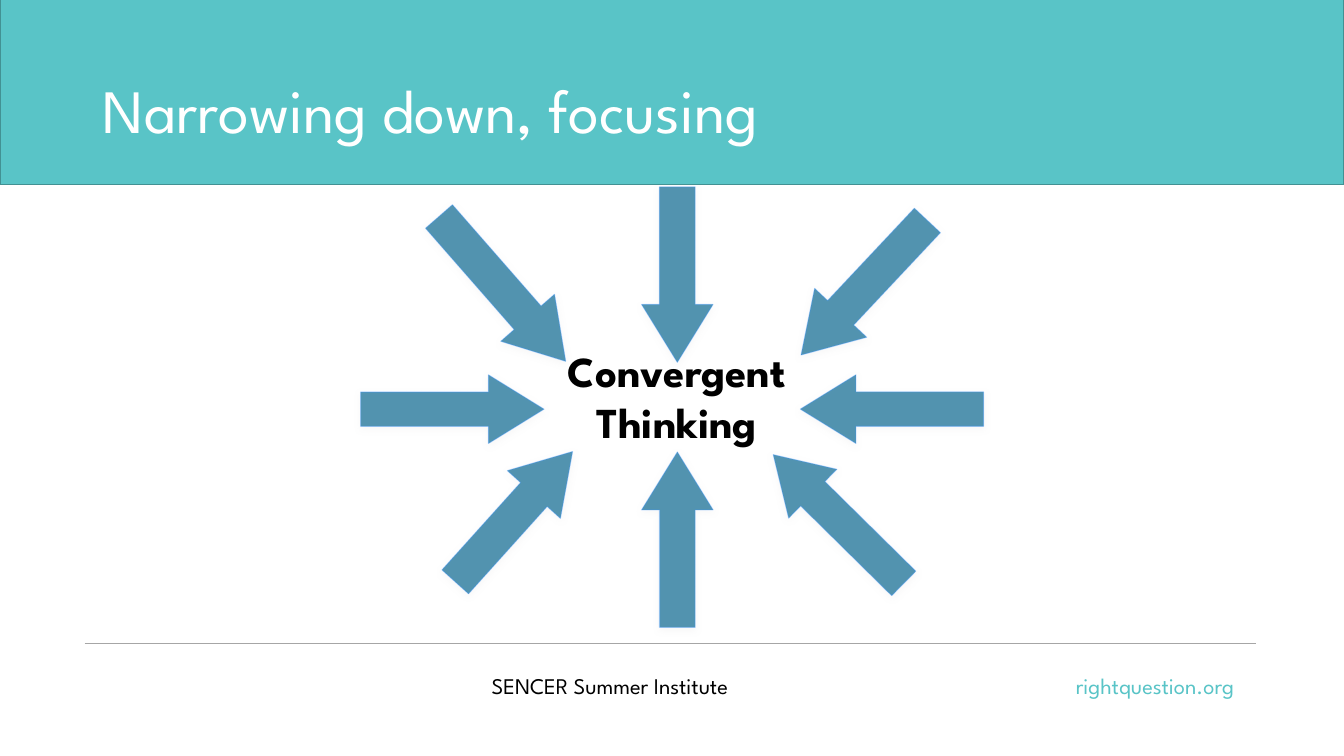
import pptx
import pptx.util
import pptx.dml.color
import pptx.enum.shapes
import pptx.enum.text
import pptx.oxml
import pptx.oxml.ns
from pptx.util import Cm

MSO_SHAPE = pptx.enum.shapes.MSO_SHAPE
ANCHOR = pptx.enum.text.MSO_ANCHOR
ALIGN = pptx.enum.text.PP_ALIGN


def paint(color_format, color, alpha=None):
    """Set a hex colour, with an optional opacity in percent."""
    color_format.rgb = pptx.dml.color.RGBColor.from_string(color)
    if alpha is not None:
        fill = color_format._xFill
        opacity = fill[0].makeelement(pptx.oxml.ns.qn("a:alpha"), {"val": str(alpha * 1000)})
        fill[0].append(opacity)


def add_text(left, top, width, height, text, size, color, align, anchor, spacing=None, bold=False):
    box = slide.shapes.add_textbox(Cm(left), Cm(top), Cm(width), Cm(height))
    frame = box.text_frame
    frame.word_wrap = True
    frame.vertical_anchor = anchor
    frame.text = text
    for paragraph in frame.paragraphs:
        paragraph.alignment = align
        paragraph.line_spacing = spacing
        for run in paragraph.runs:
            run.font.name = "League Spartan"
            run.font.size = pptx.util.Pt(size)
            run.font.bold = bold
            paint(run.font.color, color)


deck = pptx.Presentation()
deck.slide_width, deck.slide_height = Cm(33.87), Cm(19.05)
slide = deck.slides.add_slide(deck.slide_layouts[6])

# Footer
add_text(12.14, 16.89, 7.65, 1.7, "SENCER Summer Institute", 16, "000000",
         ALIGN.LEFT, ANCHOR.TOP, 0.9)
add_text(23.7, 16.89, 7.65, 1.7, "rightquestion.org", 16, "59C4C7",
         ALIGN.RIGHT, ANCHOR.TOP, 0.9)

# Title band and footer rule
band = slide.shapes.add_shape(MSO_SHAPE.RECTANGLE, Cm(0), Cm(-0.05), Cm(33.87), Cm(4.7))
band.shadow.inherit = False
band.fill.solid()
paint(band.fill.fore_color, "59C4C7")
band.line.width = pptx.util.Pt(1)
band.line.fill.solid()
paint(band.line.color, "429193")

footer_rule = slide.shapes.add_connector(
    pptx.enum.shapes.MSO_CONNECTOR.STRAIGHT, Cm(2.13), Cm(16.21), Cm(31.65), Cm(16.21))
footer_rule.line.width = pptx.util.Pt(0.5)
paint(footer_rule.line.color, "A6A6A6")
footer_rule._element.spPr.append(
    footer_rule._element.makeelement(pptx.oxml.ns.qn("a:effectLst"), {}))

# Arrows pointing at the centre: centre x, centre y, length, thickness, rotation
arrows = [
    (12.66, 7.28, 4.85, 1.8, 228.8),
    (11.4, 10.31, 4.62, 1.73, 180),
    (22.48, 10.31, 4.62, 1.73, 0),
    (17.07, 6.92, 4.42, 1.8, 270),
    (21.78, 7.25, 4.65, 1.8, 313.2),
    (12.95, 13.02, 4.42, 1.8, 132),
    (17.07, 13.6, 4.42, 1.8, 90),
    (21.13, 13.08, 4.62, 1.73, 44.6),
]
SHADOW = (
    '<a:outerShdw xmlns:a="http://schemas.openxmlformats.org/drawingml/2006/main" '
    'blurRad="63500" dist="22860" dir="5400000" rotWithShape="0">'
    '<a:srgbClr val="E7E6E6"><a:alpha val="35000"/></a:srgbClr></a:outerShdw>'
)
for center_x, center_y, length, thickness, rotation in arrows:
    arrow = slide.shapes.add_shape(
        MSO_SHAPE.LEFT_ARROW, Cm(center_x - length / 2), Cm(center_y - thickness / 2),
        Cm(length), Cm(thickness))
    arrow.rotation = rotation
    arrow.adjustments[0] = 0.5
    arrow.adjustments[1] = 0.81
    arrow.fill.solid()
    paint(arrow.fill.fore_color, "2C7C9F")
    arrow.line.width = pptx.util.Pt(0.75)
    arrow.line.fill.solid()
    paint(arrow.line.color, "3A93FF")
    arrow.shadow.inherit = False
    properties = arrow._element.spPr
    for color, opacity in zip(properties.iter(pptx.oxml.ns.qn("a:srgbClr")), (81, 34)):
        color.append(color.makeelement(pptx.oxml.ns.qn("a:alpha"), {"val": str(opacity * 1000)}))
    properties.find(pptx.oxml.ns.qn("a:effectLst")).append(pptx.oxml.parse_xml(SHADOW))

add_text(12.98, 8.66, 8.15, 2.74, "Convergent\nThinking", 30.5, "000000",
         ALIGN.CENTER, ANCHOR.BOTTOM, bold=True)
add_text(2.34, 1.02, 29.21, 3.68, "Narrowing down, focusing", 44, "FFFFFF",
         ALIGN.LEFT, ANCHOR.MIDDLE, 0.9)

deck.save("out.pptx")
